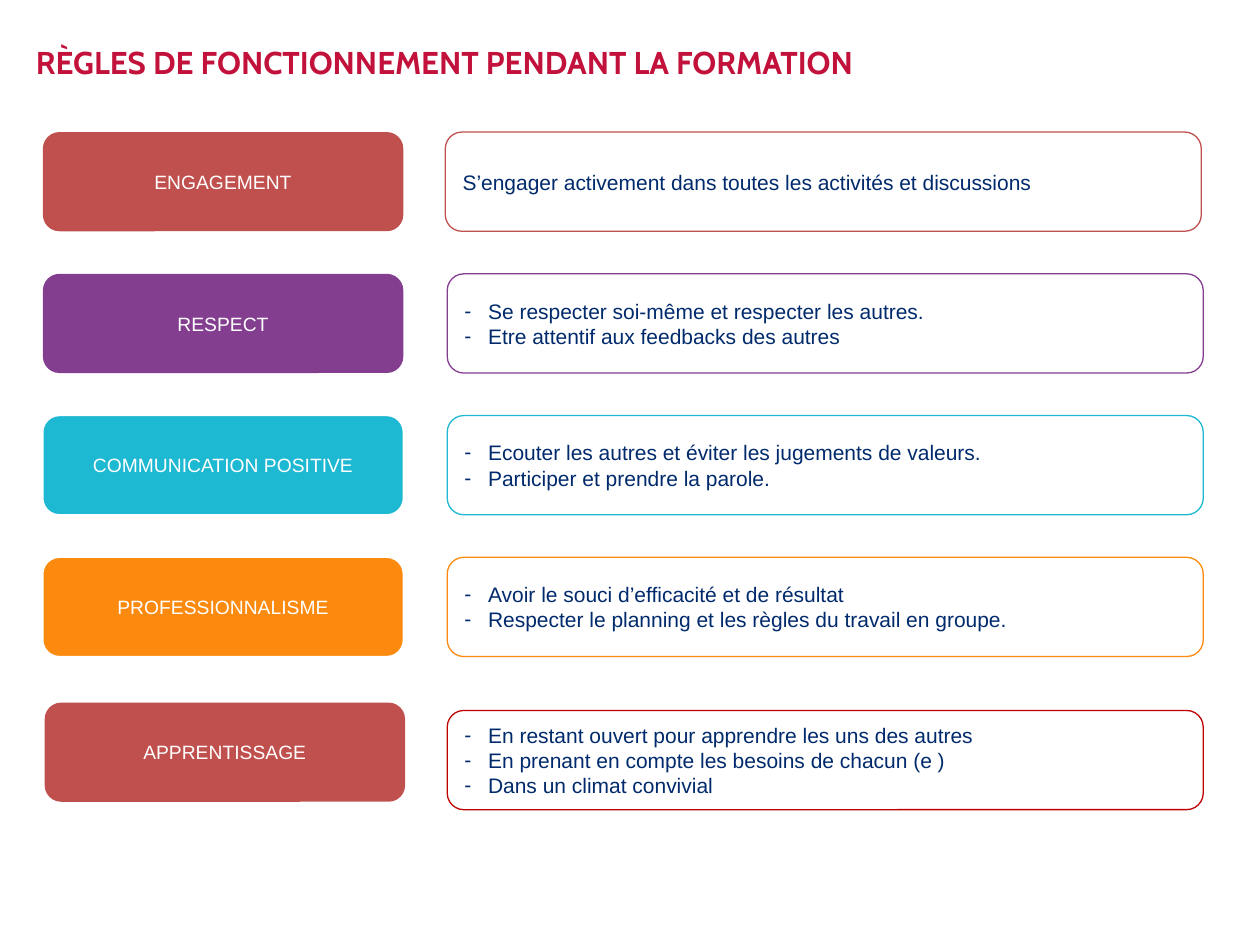
from lxml import etree
from pptx import Presentation
from pptx.dml.color import RGBColor
from pptx.enum import shapes, text
from pptx.oxml import ns
from pptx.util import Pt

NAVY = "002A6C"
WHITE = "FFFFFF"
INDENT = Pt(13.5)


def rgb(value):
    return RGBColor.from_string(value)


def add_card(left, top, width, fill, outline, lines, size, color, align, bulleted):
    """Rounded card with one paragraph per line of text."""
    card = slide.shapes.add_shape(shapes.MSO_SHAPE.ROUNDED_RECTANGLE,
                                  Pt(left), Pt(top), Pt(width), Pt(56.7))
    card.shadow.inherit = False
    if fill:
        card.fill.solid()
        card.fill.fore_color.rgb = rgb(fill)
    else:
        card.fill.background()
    if outline:
        card.line.color.rgb = rgb(outline)
        card.line.width = Pt(0.75)
    else:
        card.line.fill.background()
    frame = card.text_frame
    frame.word_wrap = True
    frame.vertical_anchor = text.MSO_ANCHOR.MIDDLE
    for i, line in enumerate(lines):
        para = frame.paragraphs[0] if i == 0 else frame.add_paragraph()
        para.alignment = align
        if bulleted:
            props = para._p.get_or_add_pPr()
            props.set("marL", str(INDENT))
            props.set("indent", str(-INDENT))
            tint = etree.SubElement(props, ns.qn("a:buClr"))
            etree.SubElement(tint, ns.qn("a:srgbClr"), val=color)
            etree.SubElement(props, ns.qn("a:buFont"), typeface="Arial")
            etree.SubElement(props, ns.qn("a:buChar"), char="-")
        run = para.add_run()
        run.text = line
        run.font.name = "Arial"
        run.font.size = Pt(size)
        run.font.color.rgb = rgb(color)


deck = Presentation()
deck.slide_width, deck.slide_height = Pt(720), Pt(540)
slide = deck.slides.add_slide(deck.slide_layouts[6])

# Heading
heading = slide.shapes.add_textbox(Pt(20.5), Pt(24.5), Pt(578), Pt(51)).text_frame
heading.word_wrap = True
heading.margin_left = heading.margin_right = 0
heading.margin_top = heading.margin_bottom = 0
title = heading.paragraphs[0].add_run()
title.text = "RÈGLES DE FONCTIONNEMENT PENDANT LA FORMATION"
title.font.name = "Cabin"
title.font.size = Pt(18)
title.font.bold = True
title.font.color.rgb = rgb("C2113A")

# Rules: name, fill, name edge, detail edge, name left/top, detail left/top, details
first, step = 75.5, 81
rules = [
    ("ENGAGEMENT", "C0504D", None, "C0504D", 24.5, first, 254.5, first,
     ["S’engager activement dans toutes les activités et discussions"]),
    ("RESPECT", "833E90", None, "833E90", 24.5, first + step, 255.6, first + step,
     ["Se respecter soi-même et respecter les autres.",
      "Etre attentif aux feedbacks des autres"]),
    ("COMMUNICATION POSITIVE", "1DB8D1", WHITE, "1DB8D1",
     24.5, first + 2 * step, 255.6, first + 2 * step,
     ["Ecouter les autres et éviter les jugements de valeurs.",
      "Participer et prendre la parole."]),
    ("PROFESSIONNALISME", "FC8A0E", WHITE, "FC8A0E",
     24.5, first + 3 * step, 255.6, first + 3 * step,
     ["Avoir le souci d’efficacité et de résultat",
      "Respecter le planning et les règles du travail en groupe."]),
    ("APPRENTISSAGE", "C0504D", None, "C00000", 25.5, 401.5, 255.6, 406,
     ["En restant ouvert pour apprendre les uns des autres",
      "En prenant en compte les besoins de chacun (e )",
      "Dans un climat convivial"]),
]
for (name, fill, name_edge, detail_edge, name_left, name_top,
     detail_left, detail_top, details) in rules:
    add_card(name_left, name_top, 206, fill, name_edge, [name], 11, WHITE,
             text.PP_ALIGN.CENTER, False)
    add_card(detail_left, detail_top, 432, None, detail_edge, details, 12, NAVY,
             text.PP_ALIGN.LEFT, len(details) > 1)

deck.save("out.pptx")
